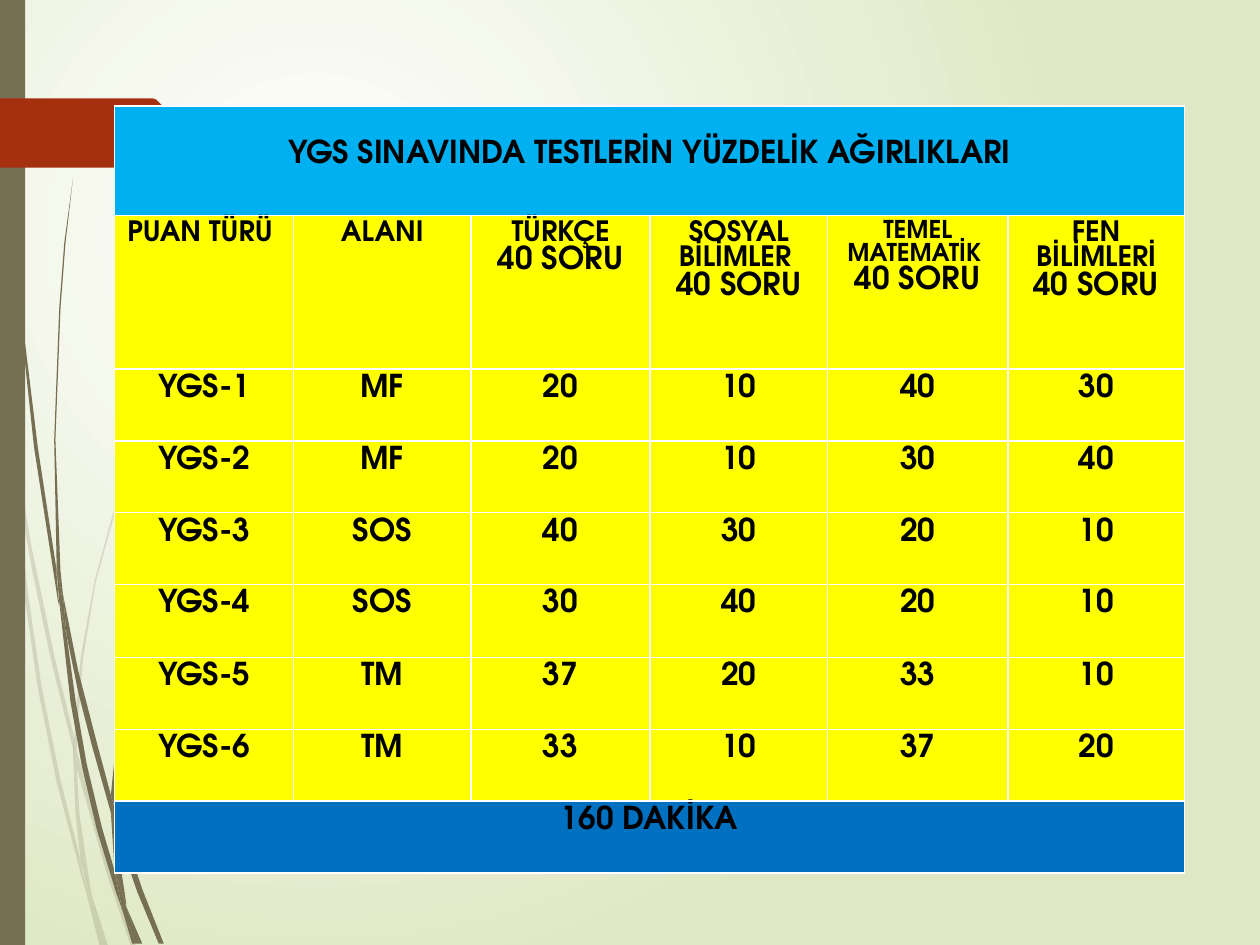
from pptx import Presentation
from pptx.dml.color import RGBColor
from pptx.enum.shapes import MSO_SHAPE
from pptx.enum.text import PP_ALIGN
from pptx.oxml import parse_xml
from pptx.oxml.ns import nsdecls, qn
from pptx.util import Pt

PX = 9144  # 100 px to the inch
WIDTH, HEIGHT = 1000, 750
FONT = "TeX Gyre Adventor"

OLIVE = RGBColor(0x76, 0x6F, 0x54)
RUST = RGBColor(0xA5, 0x30, 0x10)
SKY = RGBColor(0x00, 0xB0, 0xF0)
YELLOW = RGBColor(0xFF, 0xFF, 0x00)
BLUE = RGBColor(0x00, 0x70, 0xC0)
BLACK = RGBColor(0, 0, 0)
WHITE = RGBColor(0xFF, 0xFF, 0xFF)
PALE_GREEN = RGBColor(0xDF, 0xE8, 0xC4)

TITLE = "YGS SINAVINDA TESTLERİN YÜZDELİK AĞIRLIKLARI"
DURATION = "160 DAKİKA"
QUESTIONS = ("40 SORU", 18)
HEADERS = [
    [("PUAN TÜRÜ ", 16)],
    [("ALANI", 16)],
    [("TÜRKÇE", 16), QUESTIONS],
    [("SOSYAL BİLİMLER ", 16), QUESTIONS],
    [("TEMEL MATEMATİK ", 14), QUESTIONS],
    [("FEN BİLİMLERİ", 16), QUESTIONS],
]
WEIGHTS = [
    ("YGS-1", "MF", 20, 10, 40, 30),
    ("YGS-2", "MF", 20, 10, 30, 40),
    ("YGS-3", "SOS", 40, 30, 20, 10),
    ("YGS-4", "SOS", 30, 40, 20, 10),
    ("YGS-5", "TM", 37, 20, 33, 10),
    ("YGS-6", "TM", 33, 10, 37, 20),
]
TABLE_LEFT, TABLE_TOP = 91, 84
COLUMN_WIDTHS = [142, 141, 142, 141, 143, 140]
ROW_HEIGHTS = [87, 122, 57, 57, 57, 58, 57, 57, 57]
CELL_MARGIN, TITLE_MARGIN = 4, 27

# Outlines of the grass blades, in px
FAINT_GRASS = [
    [(8, 350), (6, 322), (0, 282), (0, 299), (7, 344)],
    [(40, 522), (59, 599), (59, 586), (43, 520), (25, 434), (10, 345), (12, 376), (25, 450)],
    [(64, 607), (61, 596), (61, 610), (85, 694), (104, 751), (108, 751), (88, 692)],
    [(83, 751), (86, 751), (73, 711)],
    [(64, 683), (48, 619), (33, 545), (22, 469), (12, 376), (8, 350), (19, 470),
     (30, 546), (45, 621), (64, 693), (70, 714), (69, 707)],
    [(58, 599), (60, 646), (64, 683), (67, 692), (73, 711), (72, 706), (63, 646),
     (61, 610), (61, 608)],
    [(61, 584), (66, 522), (76, 462), (92, 404), (111, 349), (159, 245), (187, 198),
     (201, 175), (217, 154), (217, 153), (201, 175), (186, 197), (158, 244), (110, 348),
     (91, 403), (75, 461), (64, 522), (59, 584), (59, 586), (61, 596)],
    [(70, 714), (79, 751), (82, 751)],
    [(61, 608), (61, 610), (61, 596), (59, 586), (58, 599)],
    [(67, 692), (65, 683), (69, 707), (70, 714), (82, 751), (83, 751), (73, 711)],
]
GRASS = [
    [(5, 110), (14, 233), (27, 355), (46, 477), (47, 481), (45, 457), (45, 453),
     (30, 355), (15, 232), (6, 109), (4, 48), (3, 0), (2, 0), (3, 48)],
    [(73, 592), (88, 645), (88, 633), (88, 631), (77, 590), (62, 532), (50, 472),
     (53, 505), (62, 549)],
    [(94, 649), (91, 641), (91, 656), (109, 708), (126, 749), (130, 749), (113, 706)],
    [(91, 691), (81, 657), (69, 607), (60, 556), (53, 505), (47, 477), (56, 557),
     (65, 608), (77, 659), (92, 708), (97, 722), (96, 717)],
    [(50, 472), (48, 453), (44, 349), (48, 245), (52, 193), (58, 141), (51, 193),
     (47, 245), (43, 349), (45, 449), (49, 472)],
    [(110, 749), (113, 749), (100, 719)],
    [(47, 477), (53, 505), (50, 472), (49, 472), (45, 449), (45, 453)],
    [(91, 633), (95, 592), (103, 552), (131, 476), (169, 406), (191, 374), (203, 359),
     (216, 344), (215, 344), (203, 358), (191, 373), (168, 405), (129, 474), (101, 551),
     (92, 591), (88, 631), (91, 641)],
    [(97, 722), (105, 749), (108, 749)],
    [(88, 645), (91, 691), (96, 706), (100, 719), (100, 716), (91, 656), (90, 651)],
    [(88, 645), (90, 651), (91, 656), (91, 641), (88, 631), (88, 633)],
    [(96, 706), (91, 691), (96, 717), (97, 722), (108, 749), (110, 749), (100, 719)],
]
TAG = [(0, 78), (121, 78), (124, 79), (149, 104), (149, 107), (124, 132), (121, 133), (0, 133)]


def paint(shape, color, opacity=100):
    shape.shadow.inherit = False
    shape.fill.solid()
    shape.fill.fore_color.rgb = color
    shape.line.fill.background()
    if opacity < 100:
        tint = shape.element.spPr.find(qn("a:solidFill"))[0]
        tint.append(parse_xml(f'<a:alpha {nsdecls("a")} val="{opacity * 1000}"/>'))


def add_outline(slide, points, color, opacity=100):
    builder = slide.shapes.build_freeform(*points[0], scale=PX)
    builder.add_line_segments(points[1:], close=True)
    paint(builder.convert_to_shape(), color, opacity)


def set_background(slide):
    slide.background.fill.solid()
    properties = slide.element.find(".//" + qn("p:bgPr"))
    properties.replace(properties[0], parse_xml(
        f'<a:gradFill {nsdecls("a")} rotWithShape="1"><a:gsLst>'
        f'<a:gs pos="0"><a:srgbClr val="{WHITE}"/></a:gs>'
        f'<a:gs pos="100000"><a:srgbClr val="{PALE_GREEN}"/></a:gs></a:gsLst>'
        '<a:path path="circle"><a:fillToRect l="50000" t="50000" r="100000" b="100000"/>'
        '</a:path></a:gradFill>'))


def set_borders(cell):
    properties = cell._tc.get_or_add_tcPr()
    for place, side in enumerate("LRTB"):
        properties.insert(place, parse_xml(
            f'<a:ln{side} {nsdecls("a")} w="{Pt(1)}"><a:solidFill>'
            f'<a:srgbClr val="{WHITE}"/></a:solidFill></a:ln{side}>'))


def fill_cell(cell, lines, color, margin_top=CELL_MARGIN):
    cell.margin_top = margin_top * PX
    cell.fill.solid()
    cell.fill.fore_color.rgb = color
    frame = cell.text_frame
    frame.text = "\n".join(text for text, _ in lines)
    for paragraph, (_, size) in zip(frame.paragraphs, lines):
        paragraph.alignment = PP_ALIGN.CENTER
        font = paragraph.font
        font.name, font.size, font.bold = FONT, Pt(size), True
        font.color.rgb = BLACK


def add_weights_table(slide):
    table = slide.shapes.add_table(
        len(ROW_HEIGHTS), len(COLUMN_WIDTHS), TABLE_LEFT * PX, TABLE_TOP * PX,
        sum(COLUMN_WIDTHS) * PX, sum(ROW_HEIGHTS) * PX).table
    table.first_row = table.horz_banding = False
    for column, width in zip(table.columns, COLUMN_WIDTHS):
        column.width = width * PX
    for row, height in zip(table.rows, ROW_HEIGHTS):
        row.height = height * PX

    last = len(ROW_HEIGHTS) - 1
    for row, text, color, margin in ((0, TITLE, SKY, TITLE_MARGIN),
                                     (last, DURATION, BLUE, CELL_MARGIN)):
        table.cell(row, 0).merge(table.cell(row, len(COLUMN_WIDTHS) - 1))
        fill_cell(table.cell(row, 0), [(text, 18)], color, margin)

    body = [HEADERS] + [[[(str(value), 18)] for value in row] for row in WEIGHTS]
    for r, row in enumerate(body, start=1):
        for c, lines in enumerate(row):
            fill_cell(table.cell(r, c), lines, YELLOW)
    for cell in table.iter_cells():
        set_borders(cell)


def main():
    deck = Presentation()
    deck.slide_width, deck.slide_height = WIDTH * PX, HEIGHT * PX
    slide = deck.slides.add_slide(deck.slide_layouts[6])
    set_background(slide)
    for blades, opacity in ((FAINT_GRASS, 20), (GRASS, 100)):
        for blade in blades:
            add_outline(slide, blade, OLIVE, opacity)
    paint(slide.shapes.add_shape(MSO_SHAPE.RECTANGLE, 0, 0, 20 * PX, HEIGHT * PX), OLIVE)
    add_outline(slide, TAG, RUST)
    add_weights_table(slide)
    deck.save("out.pptx")


if __name__ == "__main__":
    main()
